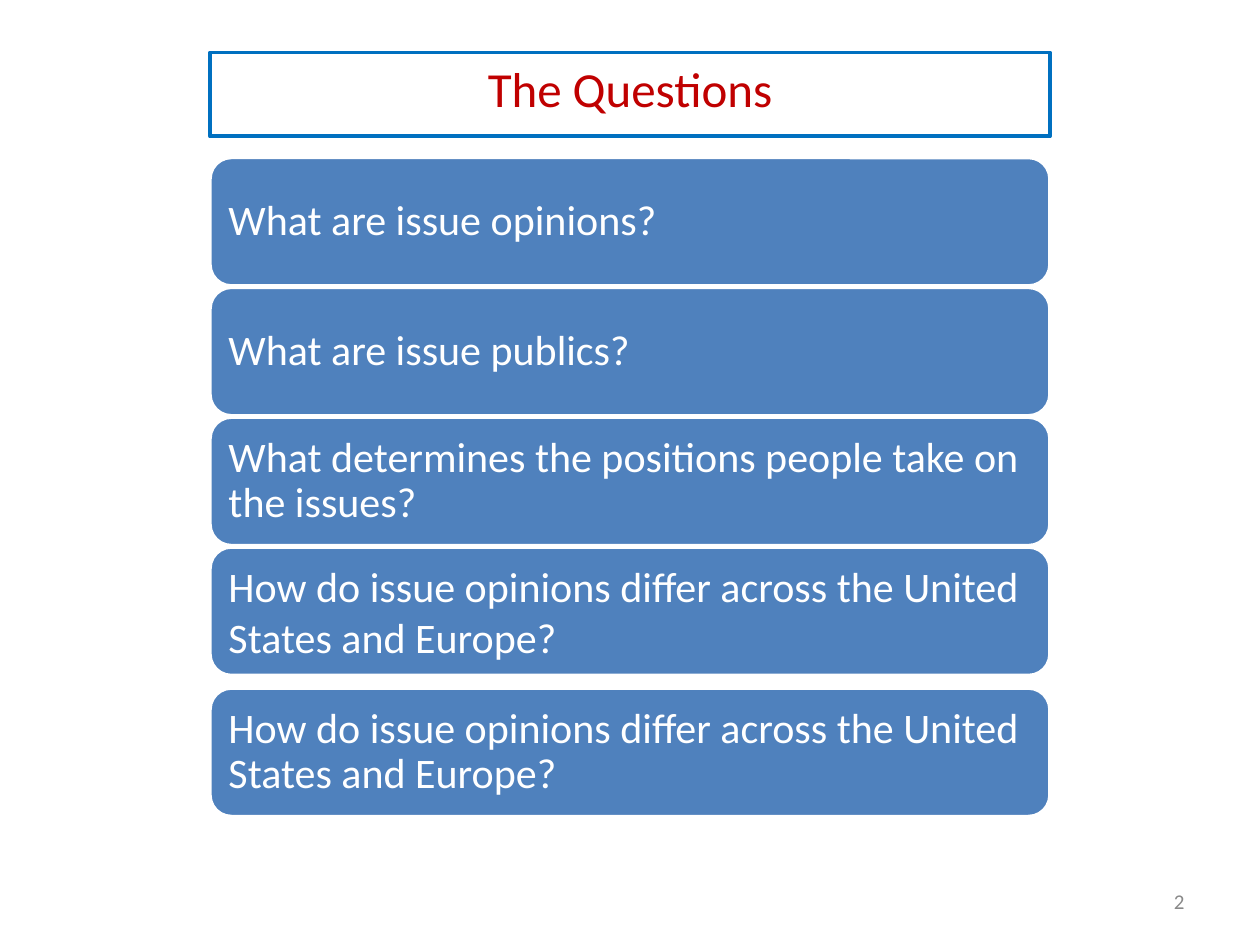
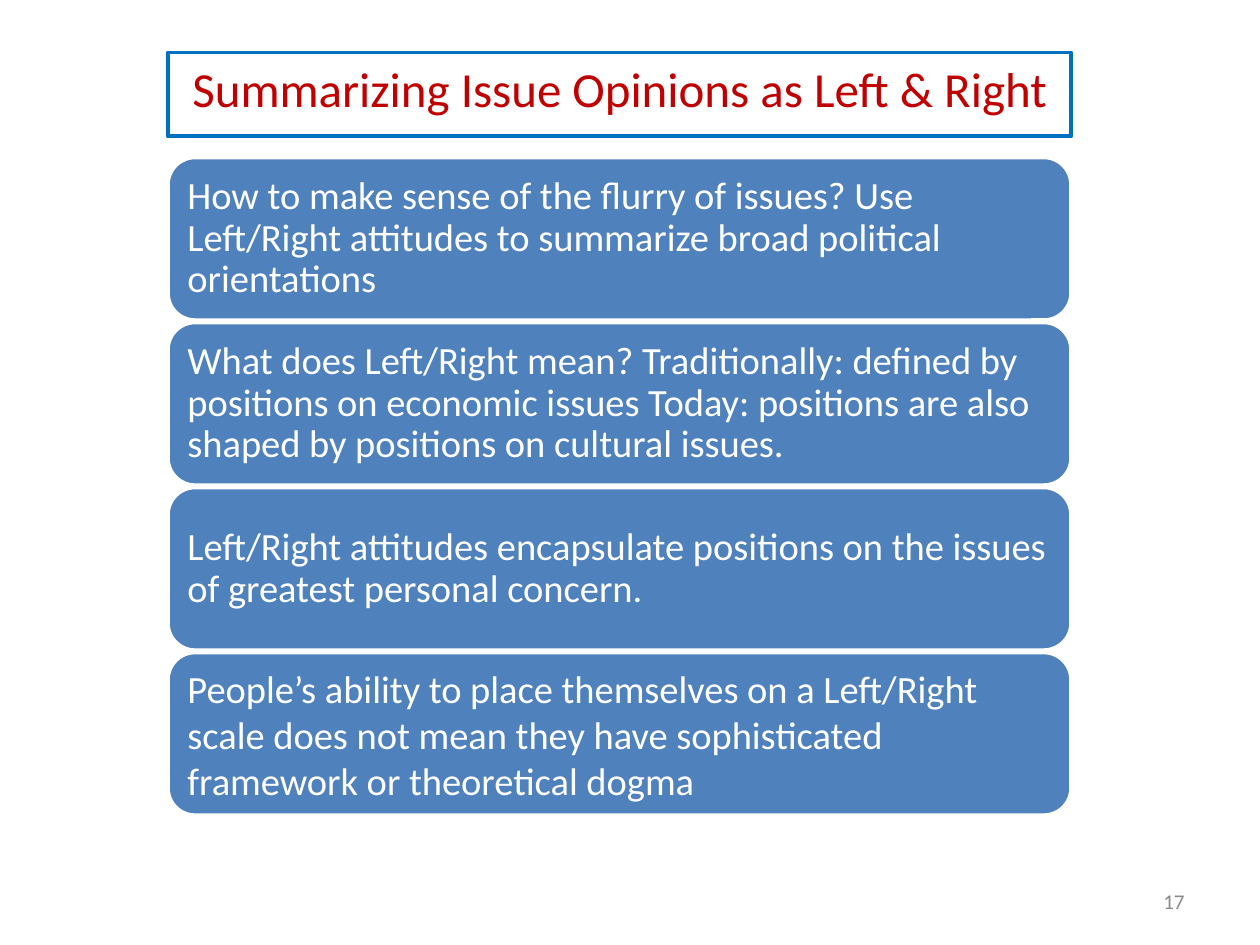
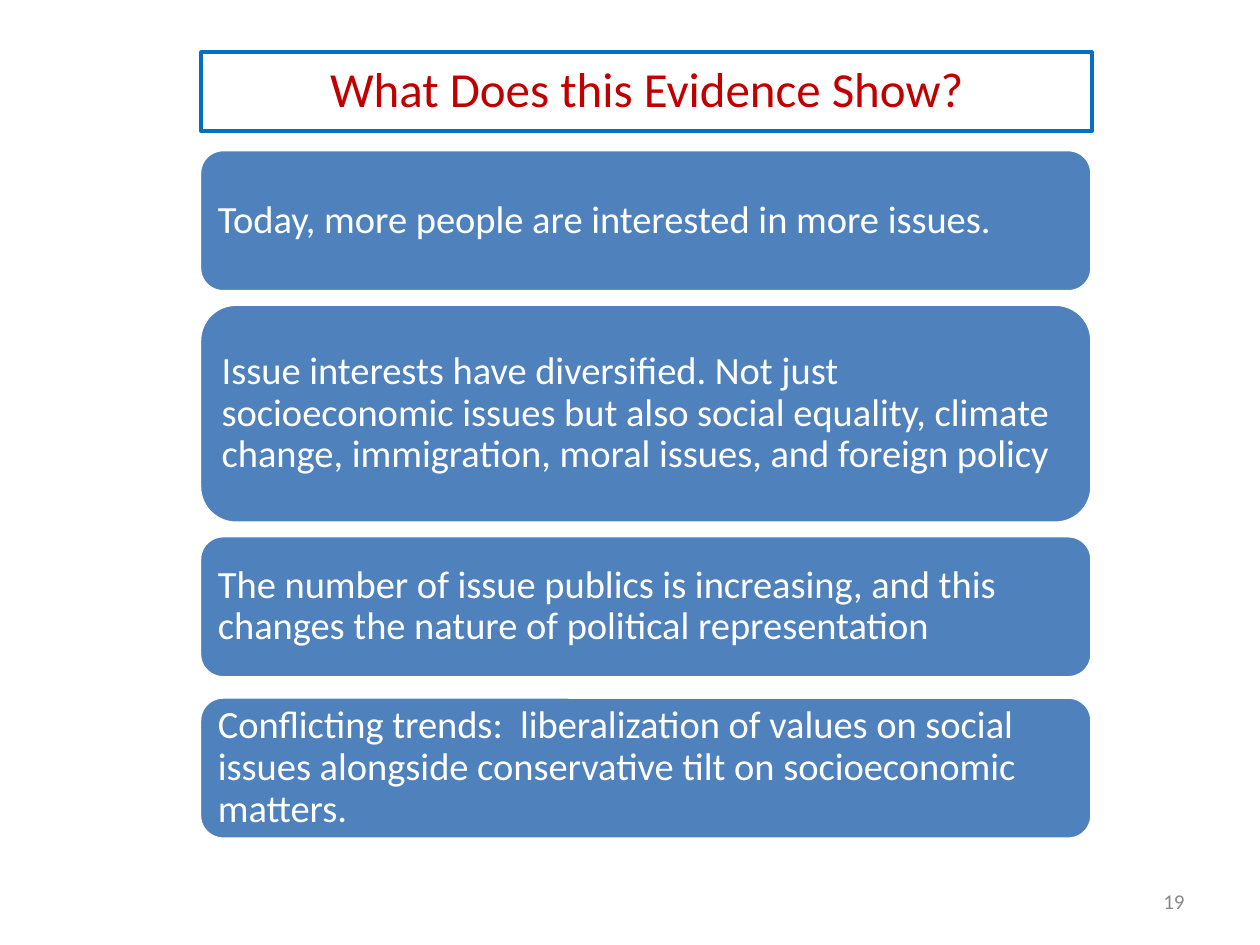
"""Build three slides of stacked question and summary cards."""
from dataclasses import dataclass

from pptx import Presentation
from pptx.dml.color import RGBColor as Rgb
from pptx.enum.shapes import MSO_SHAPE as Kind
from pptx.enum.text import MSO_ANCHOR as Anchor, PP_ALIGN as Align
from pptx.util import Pt


@dataclass(frozen=True)
class Theme:
    font: str = "Calibri"
    red: Rgb = Rgb(0xC0, 0x00, 0x00)
    frame: Rgb = Rgb(0x00, 0x70, 0xC0)
    card: Rgb = Rgb(0x4F, 0x81, 0xBD)
    white: Rgb = Rgb(0xFF, 0xFF, 0xFF)
    grey: Rgb = Rgb(0x89, 0x89, 0x89)
    head: int = 28
    foot: int = 12
    tight: float = 0.9
    loose: float = 1.0


T = Theme()

SLIDES = [
    dict(
        title="The Questions", page="2", bar=(120, 30, 480, 48),
        left=120, top=90, width=480, high=73.4, gap=0.8, size=24, pad=7,
        cards=[
            dict(text="What are issue opinions?"),
            dict(text="What are issue publics?"),
            dict(text="What determines the positions people take on the issues?"),
            dict(text="How do issue opinions differ across the United States and Europe?",
                 line=T.loose),
            dict(text="How do issue opinions differ across the United States and Europe?",
                 gap=7.2),
        ],
    ),
    dict(
        title="Summarizing Issue Opinions as Left & Right", page="17",
        bar=(96, 30, 516, 48),
        left=96, top=90, width=516, high=92.9, gap=1.4, size=22, pad=6.6,
        cards=[
            dict(text="How to make sense of the flurry of issues? Use Left/Right "
                      "attitudes to summarize broad political orientations"),
            dict(text="What does Left/Right mean? Traditionally: defined by positions "
                      "on economic issues Today: positions are also shaped by "
                      "positions on cultural issues."),
            dict(text="Left/Right attitudes encapsulate positions on the issues of "
                      "greatest personal concern."),
            dict(text="People’s ability to place themselves on a Left/Right scale does "
                      "not mean they have sophisticated framework or theoretical dogma",
                 line=T.loose),
        ],
    ),
    dict(
        title="What Does this Evidence Show?", page="19", bar=(115, 30, 509, 45),
        left=114, top=85.5, width=510, high=81.2, gap=7.1, size=22, pad=6.6,
        cards=[
            dict(text="Today, more people are interested in more issues."),
            dict(text="Issue interests have diversified. Not just socioeconomic issues "
                      "but also social equality, climate change, immigration, moral "
                      "issues, and foreign policy", high=125.2),
            dict(text="The number of issue publics is increasing, and this changes the "
                      "nature of political representation"),
            dict(text="Conflicting trends:  liberalization of values on social issues "
                      "alongside conservative tilt on socioeconomic matters.", gap=11),
        ],
    ),
]


def write(shape, text, size, color, align, anchor, line=1.0):
    frame = shape.text_frame
    frame.word_wrap = True
    frame.vertical_anchor = anchor
    para = frame.paragraphs[0]
    para.text = text
    para.alignment = align
    para.line_spacing = line
    para.font.name = T.font
    para.font.size = Pt(size)
    para.font.color.rgb = color
    return frame


def draw(slide, kind, area, edge, weight):
    shape = slide.shapes.add_shape(kind, *map(Pt, area))
    shape.shadow.inherit = False
    shape.line.color.rgb = edge
    shape.line.width = Pt(weight)
    return shape


def add_title(slide, text, area):
    bar = draw(slide, Kind.RECTANGLE, area, T.frame, 2.25)
    bar.fill.background()
    write(bar, text, T.head, T.red, Align.CENTER, Anchor.TOP)


def add_cards(slide, deck):
    top = deck["top"]
    for i, item in enumerate(deck["cards"]):
        if i:
            top += item.get("gap", deck["gap"])
        high = item.get("high", deck["high"])
        area = deck["left"], top, deck["width"], high
        card = draw(slide, Kind.ROUNDED_RECTANGLE, area, T.white, 2)
        card.fill.solid()
        card.fill.fore_color.rgb = T.card
        frame = write(card, item["text"], deck["size"], T.white, Align.LEFT,
                      Anchor.MIDDLE, item.get("line", T.tight))
        frame.margin_left = frame.margin_right = Pt(deck["pad"])
        frame.margin_top = frame.margin_bottom = Pt(deck["pad"])
        top += high


def add_page(slide, text):
    box = slide.shapes.add_textbox(Pt(516), Pt(500.5), Pt(168), Pt(28.8))
    write(box, text, T.foot, T.grey, Align.RIGHT, Anchor.MIDDLE)


def main():
    show = Presentation()
    show.slide_width, show.slide_height = Pt(720), Pt(540)
    for deck in SLIDES:
        slide = show.slides.add_slide(show.slide_layouts[6])
        add_title(slide, deck["title"], deck["bar"])
        add_cards(slide, deck)
        add_page(slide, deck["page"])
    show.save("out.pptx")


if __name__ == "__main__":
    main()
